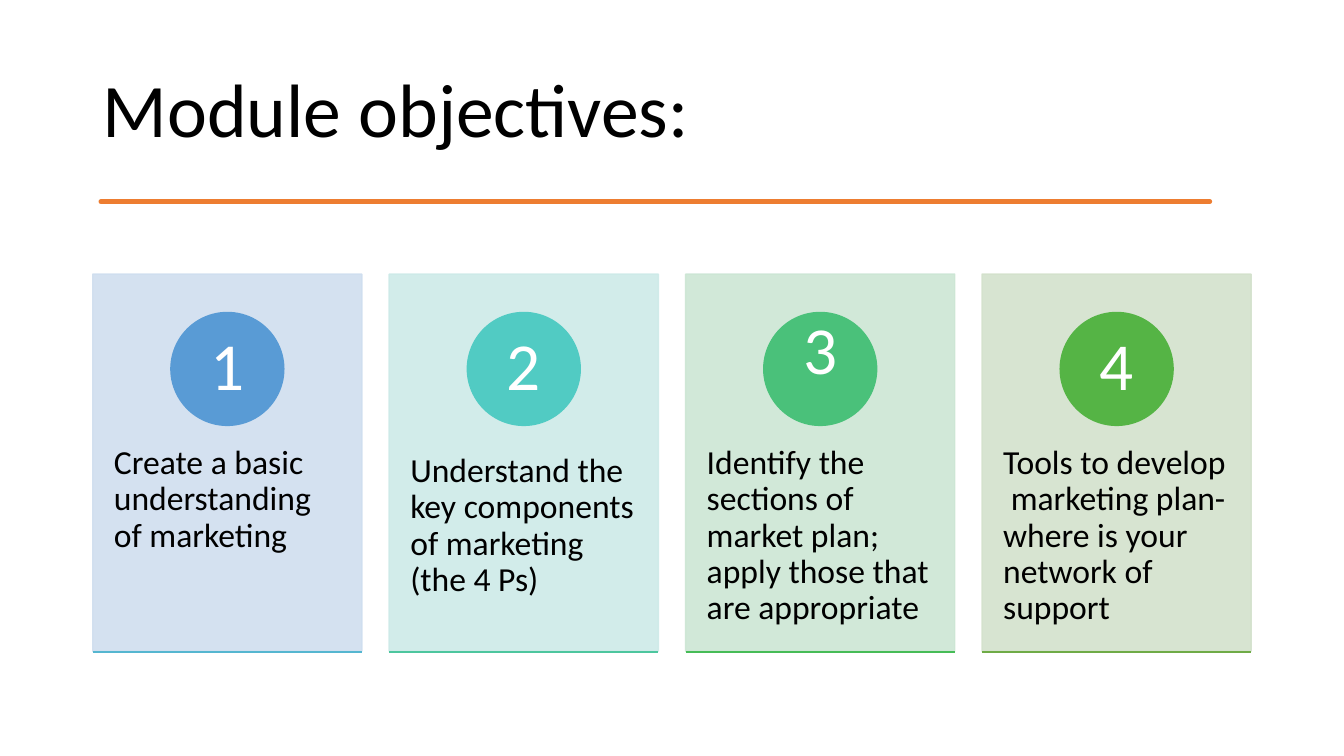
"""Build the "Module objectives" slide: a title, a hand-drawn rule and four numbered cards."""
from dataclasses import dataclass

from lxml.etree import SubElement
from pptx import Presentation
from pptx.dml.color import RGBColor as Rgb
from pptx.enum.shapes import MSO_CONNECTOR as Line, MSO_SHAPE as Shape
from pptx.enum.text import MSO_ANCHOR as Anchor, PP_ALIGN as Align
from pptx.oxml.ns import qn
from pptx.util import Inches, Pt


@dataclass(frozen=True)
class Theme:
    font: str = "Calibri"
    title_size: int = 54
    number_size: int = 48
    body_size: int = 24
    ink: str = "000000"
    paper: str = "FFFFFF"
    accent: str = "ED7D31"
    card_alpha: int = 89000


theme = Theme()


def add_text(box, words, size, color, insets, anchor=Anchor.TOP, align=Align.LEFT):
    """Place one wrapped paragraph in a box given in inches."""
    frame = slide.shapes.add_textbox(*map(Inches, box)).text_frame
    frame.word_wrap = True
    frame.vertical_anchor = anchor
    frame.margin_left = frame.margin_right = Inches(insets[0])
    frame.margin_top = frame.margin_bottom = Inches(insets[1])
    paragraph = frame.paragraphs[0]
    paragraph.text = words
    paragraph.alignment = align
    paragraph.line_spacing = 0.9
    paragraph.font.name = theme.font
    paragraph.font.size = Pt(size)
    paragraph.font.color.rgb = Rgb.from_string(color)


def paint(shape, color, line_width=1, alpha=None):
    """Give a shape one colour for fill and line, with optional transparency."""
    shape.shadow.inherit = False
    shape.fill.solid()
    shape.line.fill.solid()
    shape.line.width = Pt(line_width)
    for fill in (shape.fill, shape.line.fill):
        fill.fore_color.rgb = Rgb.from_string(color)
    if alpha:
        for solid in shape._element.spPr.iter(qn("a:solidFill")):
            SubElement(solid[0], qn("a:alpha"), val=str(alpha))


deck = Presentation()
deck.slide_width, deck.slide_height = Inches(13.33), Inches(7.5)
slide = deck.slides.add_slide(deck.slide_layouts[6])

left, card_width, gap = 0.92, 2.67, 0.27
card_top, card_height = 2.72, 3.74
circle_top, circle_size, number_size = 3.1, 1.12, 0.79

add_text((left, 0.4, 11.5, 1.45), "Module objectives:", theme.title_size, theme.ink,
         (0.1, 0.05), Anchor.MIDDLE)

stroke_edges = [
    (0.92, 2.04, 2.06), (1.5, 2.03, 2.07), (1.95, 2.04, 2.06), (2.35, 2.04, 2.06),
    (2.9, 2.04, 2.05), (3.3, 2.04, 2.05), (3.75, 2.03, 2.06), (4.05, 2.04, 2.07),
    (4.6, 2.04, 2.05), (5.1, 2.04, 2.06), (5.45, 2.02, 2.06), (5.85, 2.04, 2.06),
    (6.35, 2.04, 2.06), (6.9, 2.03, 2.06), (7.4, 2.03, 2.06), (7.9, 2.04, 2.05),
    (8.5, 2.04, 2.07), (9.1, 2.04, 2.06), (9.5, 2.03, 2.05), (10.2, 2.04, 2.06),
    (10.8, 2.03, 2.06), (11.2, 2.03, 2.07), (11.65, 2.04, 2.06), (12.32, 2.04, 2.06),
]
outline = [(x, upper) for x, upper, lower in stroke_edges]
outline += [(x, lower) for x, upper, lower in reversed(stroke_edges)]
stroke = slide.shapes.build_freeform(*outline[0], scale=Inches(1))
stroke.add_line_segments(outline[1:], close=True)
paint(stroke.convert_to_shape(), theme.accent, 3.25)

objectives = [
    ("Create a basic understanding of marketing",
     "CFDEEF", "599BD5", "55B6D0", 4.06, 3.26),
    ("Understand the key components of marketing (the 4 Ps)",
     "CDEAE8", "51CBC3", "4DC69E", 4.14, 3.26),
    ("Identify the sections of market plan; apply those that are appropriate",
     "CCE6D4", "4AC17A", "46BC57", 4.06, 3.1),
    ("Tools to develop  marketing plan-where is your network of support",
     "D3E1CC", "55B445", "6FAB46", 4.06, 3.26),
]
for column, (objective, tint, badge_color, rule_color, text_top, number_top) in enumerate(objectives):
    x = left + column * (card_width + gap)
    center = x + card_width / 2

    card = slide.shapes.add_shape(
        Shape.RECTANGLE, *map(Inches, (x, card_top, card_width, card_height)))
    paint(card, tint, alpha=theme.card_alpha)
    add_text((x, text_top, card_width, 2.25), objective, theme.body_size, theme.ink, (0.21, 0.36))

    badge = slide.shapes.add_shape(
        Shape.OVAL, *map(Inches, (center - circle_size / 2, circle_top, circle_size, circle_size)))
    paint(badge, badge_color)
    add_text((center - number_size / 2, number_top, number_size, number_size), str(column + 1),
             theme.number_size, theme.paper, (0.09, 0.01), Anchor.MIDDLE, Align.CENTER)

    rule_y = card_top + card_height + 0.01
    rule = slide.shapes.add_connector(
        Line.STRAIGHT, *map(Inches, (x, rule_y, x + card_width, rule_y)))
    rule.line.width = Pt(1)
    rule.line.color.rgb = Rgb.from_string(rule_color)
    SubElement(rule._element.spPr, qn("a:effectLst"))

deck.save("out.pptx")
